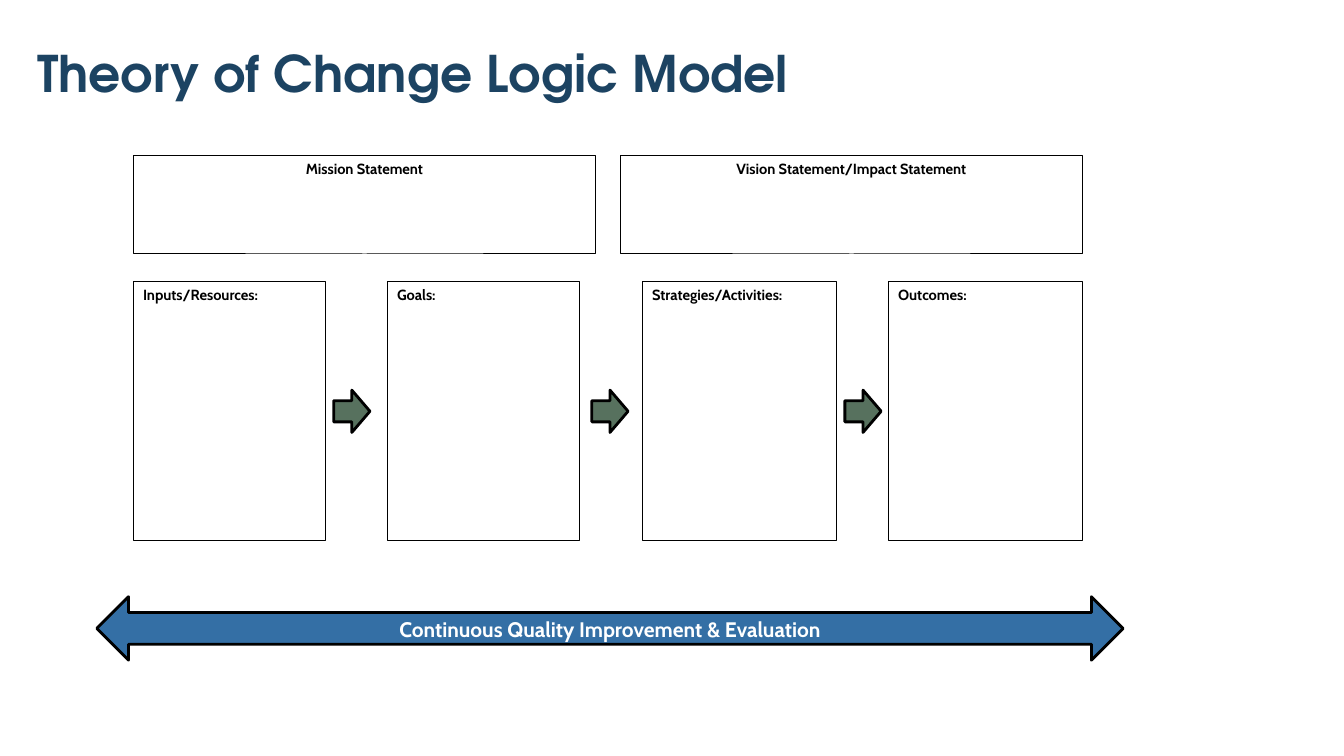
from dataclasses import dataclass

from pptx import Presentation
from pptx.dml.color import RGBColor
from pptx.enum.shapes import MSO_SHAPE
from pptx.enum.text import MSO_ANCHOR, PP_ALIGN
from pptx.shapes.autoshape import Shape
from pptx.slide import Slide
from pptx.text.text import TextFrame
from pptx.util import Emu, Pt

NAVY = RGBColor(0x1C, 0x43, 0x62)
BLUE = RGBColor(0x34, 0x6F, 0xA5)
GREEN = RGBColor(0x57, 0x71, 0x5E)
BLACK = RGBColor(0x00, 0x00, 0x00)
WHITE = RGBColor(0xFF, 0xFF, 0xFF)

TITLE_FONT = "TeX Gyre Adventor"
BODY_FONT = "Cabin"
EMU_PER_PX = 9144  # 100 px to the inch


def px(length: int) -> Emu:
    return Emu(length * EMU_PER_PX)


@dataclass(frozen=True)
class Box:
    left: int
    top: int
    width: int
    height: int

    def emu(self) -> tuple[Emu, Emu, Emu, Emu]:
        return px(self.left), px(self.top), px(self.width), px(self.height)


@dataclass(frozen=True)
class Panel:
    heading: str
    box: Box
    align: PP_ALIGN


STATEMENTS = [
    Panel(heading, Box(left, 154, 459, 98), PP_ALIGN.CENTER)
    for heading, left in [
        ("Mission Statement", 132),
        ("Vision Statement/Impact Statement", 615),
    ]
]
STAGES = [
    Panel(heading, Box(left, 279, width, 257), PP_ALIGN.LEFT)
    for heading, left, width in [
        ("Inputs/Resources:", 132, 191),
        ("Goals:", 384, 191),
        ("Strategies/Activities:", 637, 193),
        ("Outcomes:", 881, 193),
    ]
]
STAGE_ARROWS = [Box(left, 387, 36, 42) for left in (331, 587, 838)]


def write(frame: TextFrame, text: str, font_name: str, size: float,
          color: RGBColor, align: PP_ALIGN) -> None:
    frame.word_wrap = True
    paragraph = frame.paragraphs[0]
    paragraph.text = text
    paragraph.alignment = align
    paragraph.font.name = font_name
    paragraph.font.size = Pt(size)
    paragraph.font.bold = True
    paragraph.font.color.rgb = color


def draw_outlined(slide: Slide, kind: MSO_SHAPE, box: Box, line_width: float) -> Shape:
    outlined = slide.shapes.add_shape(kind, *box.emu())
    outlined.shadow.inherit = False
    outlined.fill.background()
    outlined.line.color.rgb = BLACK
    outlined.line.width = Pt(line_width)
    return outlined


def draw_panel(slide: Slide, panel: Panel) -> None:
    frame = draw_outlined(slide, MSO_SHAPE.RECTANGLE, panel.box, 0.75).text_frame
    frame.vertical_anchor = MSO_ANCHOR.TOP
    write(frame, panel.heading, BODY_FONT, 10.5, BLACK, panel.align)


def draw_arrow(slide: Slide, kind: MSO_SHAPE, box: Box, color: RGBColor) -> None:
    arrow = draw_outlined(slide, kind, box, 2)
    arrow.fill.solid()
    arrow.fill.fore_color.rgb = color


def draw_title(slide: Slide, text: str) -> None:
    title = slide.shapes.title
    title.left, title.top, title.width, title.height = Box(37, 33, 1260, 78).emu()
    frame = title.text_frame
    frame.margin_left = frame.margin_right = 0
    frame.vertical_anchor = MSO_ANCHOR.MIDDLE
    write(frame, text, TITLE_FONT, 36, NAVY, PP_ALIGN.LEFT)


def main() -> None:
    presentation = Presentation()
    presentation.slide_width, presentation.slide_height = px(1333), px(750)
    slide = presentation.slides.add_slide(presentation.slide_layouts[5])

    draw_title(slide, "Theory of Change Logic Model")

    # Statements above the four stages
    for panel in STATEMENTS + STAGES:
        draw_panel(slide, panel)

    # Arrows from stage to stage
    for box in STAGE_ARROWS:
        draw_arrow(slide, MSO_SHAPE.RIGHT_ARROW, box, GREEN)

    # Improvement band across the bottom
    draw_arrow(slide, MSO_SHAPE.LEFT_RIGHT_ARROW, Box(96, 592, 1018, 63), BLUE)
    improvement = slide.shapes.add_textbox(*Box(159, 607, 892, 35).emu())
    write(improvement.text_frame, "Continuous Quality Improvement & Evaluation",
          BODY_FONT, 15, WHITE, PP_ALIGN.CENTER)

    presentation.save("out.pptx")


if __name__ == "__main__":
    main()
